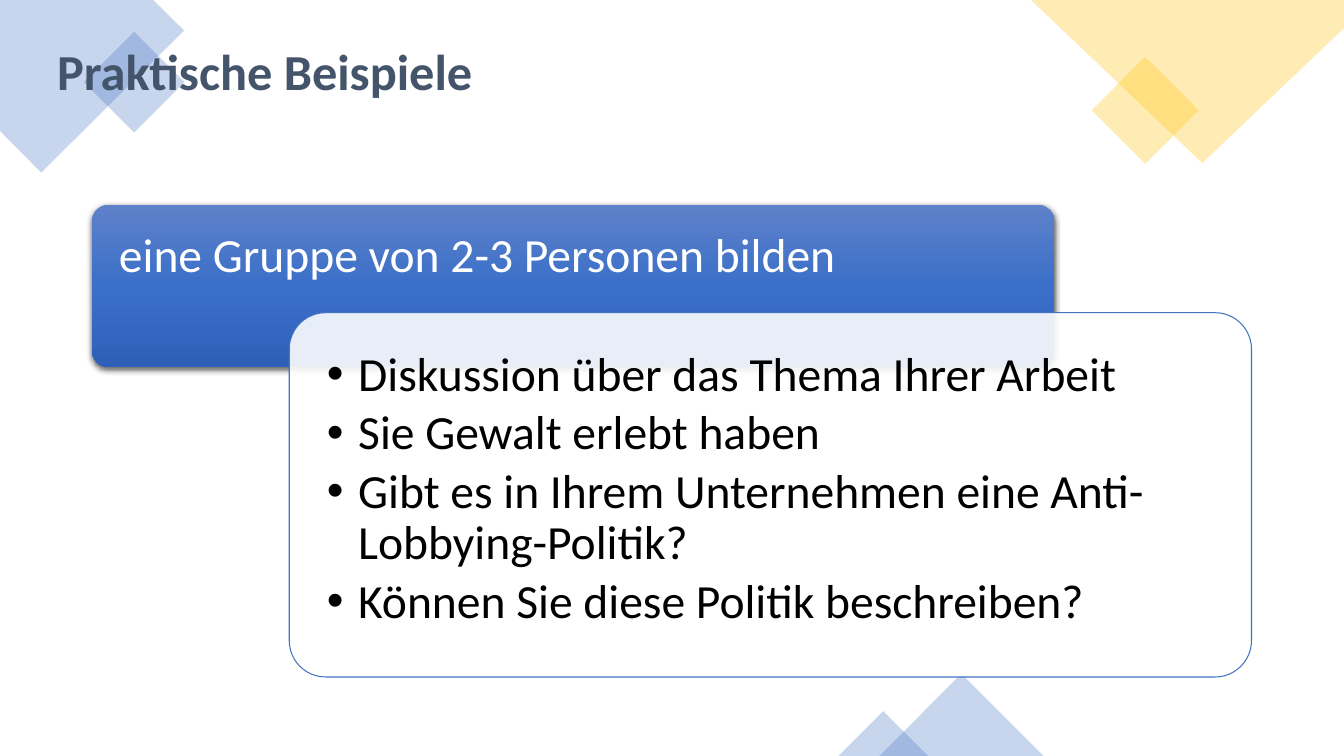
from lxml import etree
from pptx import Presentation
from pptx.dml.color import RGBColor
from pptx.enum.shapes import MSO_SHAPE
from pptx.enum.text import MSO_ANCHOR, PP_ALIGN
from pptx.oxml.ns import qn
from pptx.util import Cm, Pt

DIAMOND = MSO_SHAPE.DIAMOND
TRIANGLE = MSO_SHAPE.ISOSCELES_TRIANGLE
ROUNDED = MSO_SHAPE.ROUNDED_RECTANGLE
LEFT = PP_ALIGN.LEFT
TOP, MIDDLE = MSO_ANCHOR.TOP, MSO_ANCHOR.MIDDLE

TITLE = "Praktische Beispiele"
TASK = "eine Gruppe von 2-3 Personen bilden"
QUESTIONS = [
    "Diskussion über das Thema Ihrer Arbeit",
    "Sie Gewalt erlebt haben",
    "Gibt es in Ihrem Unternehmen eine Anti-Lobbying-Politik?",
    "Können Sie diese Politik beschreiben?",
]

THEME = {
    "font": "Calibri", "title_size": 36, "body_size": 34,
    "title": "44546A", "white": "FFFFFF", "black": "000000",
    "blue": "4472C4", "yellow": "FFC000", "panel_line": "4372C3",
    "gradient": [(0, "5E81C9"), (50, "3B70C9"), (100, "2E60B8")],
    "decor_alpha": 29, "panel_alpha": 89, "shadow_alpha": 62,
}

# All lengths in centimetres
WIDTH, HEIGHT = 33.87, 19.05
CORNERS = [
    ("blue", [(0, 0), (3.86, 0), (4.64, 0.77), (1.04, 4.35), (0, 3.3)]),
    ("yellow", [(25.98, 0), (WIDTH, 0), (WIDTH, 0.71), (30.3, 4.11)]),
]
DIAMONDS = [("blue", 2.11, 0.8, 2.54), ("yellow", 27.51, 1.43, 2.7)]
TRIANGLES = [("blue", 22.16, 4.14), ("blue", 21.13, 2.26)]
TITLE_BOX = (1.19, 0.58, 29.21, 2.59)
TASK_BOX = (2.32, 5.16, 24.25, 4.09)
PANEL_BOX = (7.29, 7.88, 24.25, 9.18)
TITLE_INSETS = (0.25, 0.13, 0.25, 0.13)
TASK_INSETS = (0.56, 0.56, 0.56, 0.36)
PANEL_INSETS = (0.68, 0.68, 0.4, 0.4)
BULLET_INDENT = 0.79


def color(name):
    return RGBColor.from_string(THEME[name])


def add_element(parent, tag, **attributes):
    return etree.SubElement(parent, qn(tag), attributes)


def fill_solid(shape, name, alpha):
    shape.fill.solid()
    shape.fill.fore_color.rgb = color(name)
    solid = shape._element.spPr.find(qn("a:solidFill"))
    add_element(solid[0], "a:alpha", val=str(alpha * 1000))


def decorate(shape, name):
    shape.shadow.inherit = False
    fill_solid(shape, name, THEME["decor_alpha"])
    shape.line.fill.background()


def add_decoration(shapes):
    for name, points in CORNERS:
        corner = [(Cm(x), Cm(y)) for x, y in points]
        builder = shapes.build_freeform(*corner[0])
        builder.add_line_segments(corner[1:], close=True)
        decorate(builder.convert_to_shape(), name)
    for name, left, top, size in DIAMONDS:
        decorate(shapes.add_shape(DIAMOND, Cm(left), Cm(top), Cm(size), Cm(size)), name)
    for name, left, width in TRIANGLES:
        height = width / 2
        decorate(shapes.add_shape(TRIANGLE, Cm(left), Cm(HEIGHT - height),
                                  Cm(width), Cm(height)), name)


def add_bullet(paragraph):
    properties = paragraph._p.get_or_add_pPr()
    properties.set("marL", str(Cm(BULLET_INDENT)))
    properties.set("indent", str(-Cm(BULLET_INDENT)))
    add_element(properties, "a:buFont", typeface="Arial")
    add_element(properties, "a:buChar", char="•")


def write(shape, lines, size, name, insets, anchor=TOP, bold=False, bullets=False):
    frame = shape.text_frame
    frame.word_wrap = True
    frame.vertical_anchor = anchor
    (frame.margin_left, frame.margin_top,
     frame.margin_right, frame.margin_bottom) = map(Cm, insets)
    frame.text = "\n".join(lines)
    for index, paragraph in enumerate(frame.paragraphs):
        paragraph.alignment = LEFT
        paragraph.line_spacing = 0.9
        if index:
            paragraph.space_before = Pt(5.1)
        if bullets:
            add_bullet(paragraph)
        for run in paragraph.runs:
            run.font.name = THEME["font"]
            run.font.size = Pt(THEME[size])
            run.font.bold = bold
            run.font.color.rgb = color(name)


def add_rounded_box(shapes, box):
    shape = shapes.add_shape(ROUNDED, *map(Cm, box))
    shape.adjustments[0] = 0.1
    shape.shadow.inherit = False
    return shape


def add_task(shapes):
    shape = add_rounded_box(shapes, TASK_BOX)
    shape.line.fill.background()
    shape.fill.gradient()
    shape.fill.gradient_angle = 270
    properties = shape._element.spPr
    stops = properties.find(qn("a:gradFill")).find(qn("a:gsLst"))
    for stop in list(stops):
        stops.remove(stop)
    for position, value in THEME["gradient"]:
        stop = add_element(stops, "a:gs", pos=str(position * 1000))
        add_element(stop, "a:srgbClr", val=value)
    shadow = add_element(properties.find(qn("a:effectLst")), "a:outerShdw",
                         blurRad=str(Pt(4.5)), dist=str(Pt(1.5)),
                         dir="5400000", algn="ctr", rotWithShape="0")
    shade = add_element(shadow, "a:srgbClr", val=THEME["black"])
    add_element(shade, "a:alpha", val=str(THEME["shadow_alpha"] * 1000))
    write(shape, [TASK], "body_size", "white", TASK_INSETS)


def add_questions(shapes):
    shape = add_rounded_box(shapes, PANEL_BOX)
    fill_solid(shape, "white", THEME["panel_alpha"])
    shape.line.color.rgb = color("panel_line")
    shape.line.width = Pt(0.75)
    write(shape, QUESTIONS, "body_size", "black", PANEL_INSETS, bullets=True)


def main():
    presentation = Presentation()
    presentation.slide_width, presentation.slide_height = Cm(WIDTH), Cm(HEIGHT)
    shapes = presentation.slides.add_slide(presentation.slide_layouts[6]).shapes
    add_decoration(shapes)
    title = shapes.add_textbox(*map(Cm, TITLE_BOX))
    write(title, [TITLE], "title_size", "title", TITLE_INSETS,
          anchor=MIDDLE, bold=True)
    add_task(shapes)
    add_questions(shapes)
    presentation.save("out.pptx")


if __name__ == "__main__":
    main()
